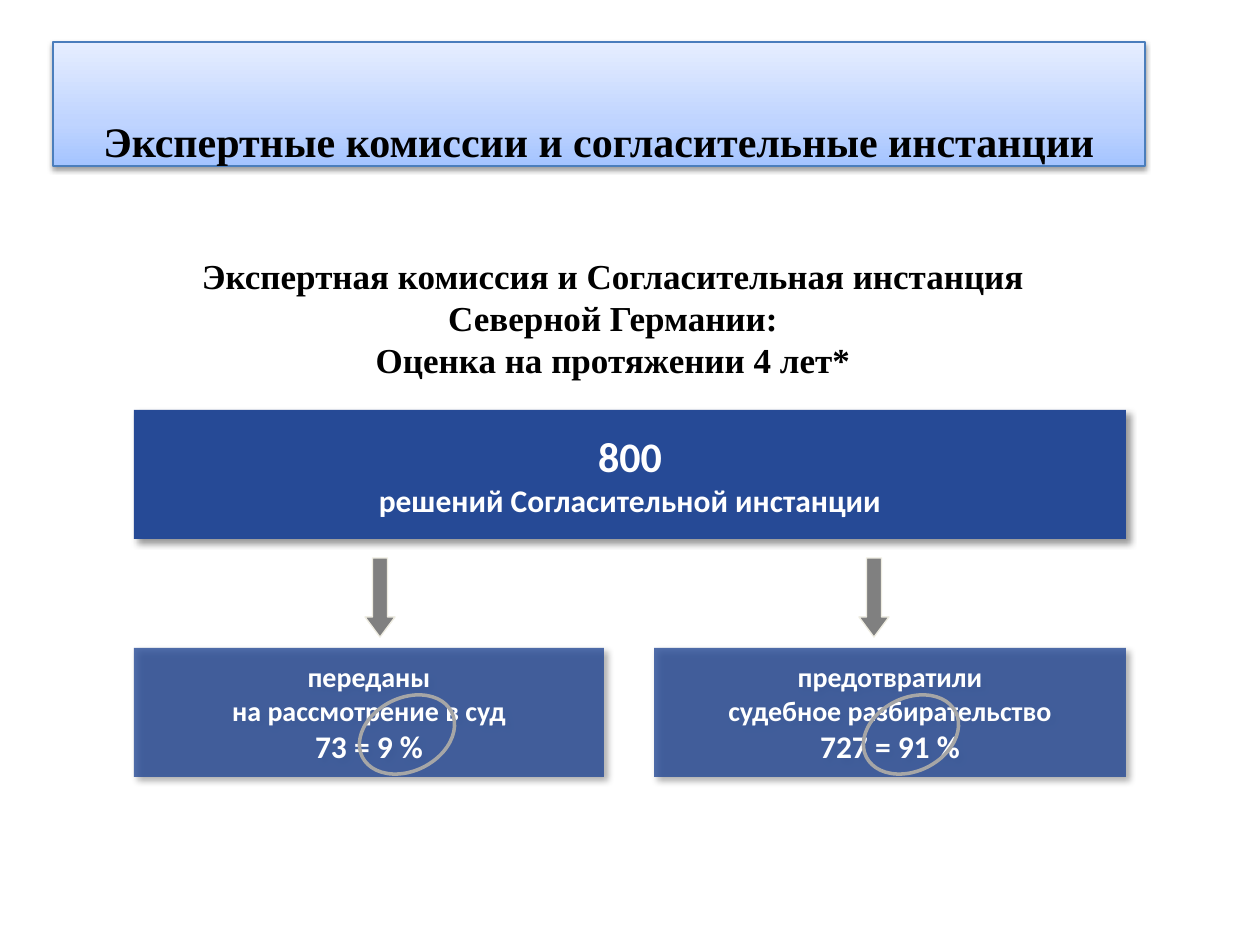
from copy import deepcopy

from lxml import etree
from pptx import Presentation
from pptx import util as u
from pptx.dml.color import RGBColor
from pptx.enum import shapes, text
from pptx.oxml import ns

SCALE = u.Inches(1) / 126
COLOURS = {
    "navy": "264A96", "white": "FFFFFF", "black": "000000", "ring": "A6A6A6",
    "arrow": "808080", "arrow_edge": "EEECE1", "title_edge": "4B7EBC",
    "title_low": "A4C4FF", "title_mid": "BFD4FF", "title_high": "E6EEFF",
}


def px(length):
    """Turn pixels into EMU."""
    return u.Emu(round(length * SCALE))


def colour(name):
    """Look up a named colour."""
    return RGBColor.from_string(COLOURS[name])


def add_child(parent, tag, **attributes):
    """Append a DrawingML element and return it."""
    values = {key: str(value) for key, value in attributes.items()}
    return etree.SubElement(parent, ns.qn(tag), values)


def add_shadow(shape, alpha, blur, distance, angle):
    """Give a shape a soft black outer shadow."""
    effects = shape._element.spPr.find(ns.qn("a:effectLst"))
    shadow = add_child(effects, "a:outerShdw", blurRad=u.Pt(blur), dist=u.Pt(distance),
                       dir=angle * 60000, algn="tl", rotWithShape=0)
    tint = add_child(shadow, "a:srgbClr", val=COLOURS["black"])
    add_child(tint, "a:alpha", val=alpha * 1000)


def add_shape(page, kind, box, fill=None, line=None, width=0.75):
    """Add a preset shape with plain fill and line."""
    shape = page.shapes.add_shape(kind, *map(px, box))
    shape.shadow.inherit = False
    if fill:
        shape.fill.solid()
        shape.fill.fore_color.rgb = colour(fill)
    else:
        shape.fill.background()
    if line:
        shape.line.color.rgb = colour(line)
        shape.line.width = u.Pt(width)
    else:
        shape.line.fill.background()
    return shape


def write_lines(shape, lines, font, ink, anchor, wrap):
    """Fill a shape with centred bold lines given as (words, size)."""
    frame = shape.text_frame
    frame.margin_left = frame.margin_right = frame.margin_top = frame.margin_bottom = 0
    frame.vertical_anchor = anchor
    frame.word_wrap = wrap
    frame.text = "\n".join(words for words, _ in lines)
    for paragraph, (_, size) in zip(frame.paragraphs, lines):
        paragraph.alignment = text.PP_ALIGN.CENTER
        for span in paragraph.runs:
            span.font.name = font
            span.font.size = u.Pt(size)
            span.font.bold = True
            span.font.color.rgb = colour(ink)


def add_title(page, box, words):
    """Draw the title band with its gradient."""
    band = add_shape(page, shapes.MSO_SHAPE.RECTANGLE, box, line="title_edge")
    band.fill.gradient()
    band.fill.gradient_angle = 90
    stops = band._element.spPr.find(".//" + ns.qn("a:gsLst"))
    stops.append(deepcopy(stops[0]))
    ramp = [(0, "title_low"), (0.35, "title_mid"), (1, "title_high")]
    for stop, (position, name) in zip(band.fill.gradient_stops, ramp):
        stop.position = position
        stop.color.rgb = colour(name)
    add_shadow(band, 38, 3.1, 1.6, 90)
    write_lines(band, [(words, 24)], "Times New Roman", "black",
                text.MSO_ANCHOR.BOTTOM, True)
    band.text_frame.paragraphs[0].line_spacing = u.Pt(35)


def add_heading(page, box, lines):
    """Place the heading above the diagram."""
    heading = page.shapes.add_textbox(*map(px, box))
    write_lines(heading, [(words, 20) for words in lines], "Times New Roman", "black",
                text.MSO_ANCHOR.TOP, True)


def add_panel(page, box, lines, alpha=100):
    """Draw a shadowed navy panel with white lines."""
    panel = add_shape(page, shapes.MSO_SHAPE.RECTANGLE, box, fill="navy")
    if alpha < 100:
        tint = panel._element.spPr.find(ns.qn("a:solidFill"))[0]
        add_child(tint, "a:alpha", val=alpha * 1000)
    add_shadow(panel, 40, 4, 3, 45)
    write_lines(panel, lines, "Calibri", "white", text.MSO_ANCHOR.MIDDLE, False)


def add_branch(page, box, lines, arrow_left, ring_left):
    """Draw an outcome panel, the arrow above it and the ring on its share."""
    left, top, _, _ = box
    add_panel(page, box, list(zip(lines, (16, 16, 18))), alpha=80)
    arrow = add_shape(page, shapes.MSO_SHAPE.DOWN_ARROW,
                      (left + arrow_left, top - 90, 30, 79), "arrow", "arrow_edge")
    arrow.adjustments[1] = 0.67
    ring = add_shape(page, shapes.MSO_SHAPE.OVAL, (left + ring_left, top + 50, 100, 73),
                     line="ring", width=2)
    ring.rotation = 333.3


def main():
    """Build the slide and save it."""
    deck = Presentation()
    deck.slide_width, deck.slide_height = u.Inches(10), u.Inches(7.5)
    page = deck.slides.add_slide(deck.slide_layouts[6])
    add_title(page, (53, 42, 1092, 124), "Экспертные комиссии и согласительные инстанции")
    add_heading(page, (134, 255, 958, 127), [
        "Экспертная комиссия и Согласительная инстанция Северной Германии:",
        "Оценка на протяжении 4 лет*",
    ])
    add_panel(page, (134, 410, 992, 129),
              [("800", 24), ("решений Согласительной инстанции", 18)])
    add_branch(page, (134, 648, 470, 129),
               ["переданы", "на рассмотрение в суд", "73 = 9 %"], 231, 223)
    add_branch(page, (654, 648, 472, 129),
               ["предотвратили", "судебное разбирательство", "727 = 91 %"], 205, 207)
    deck.save("out.pptx")


if __name__ == "__main__":
    main()
